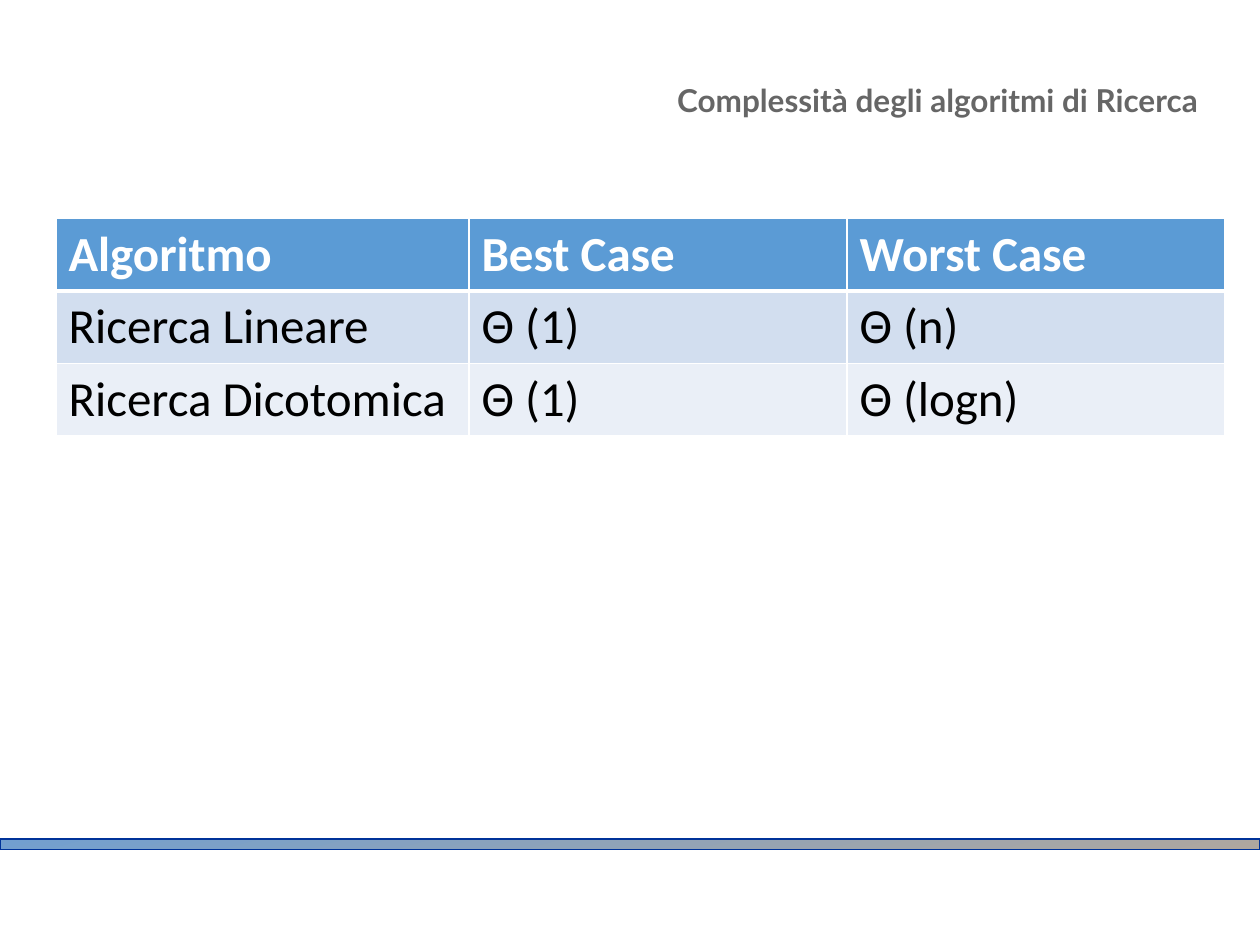
import pptx
import pptx.util
import pptx.dml.color
import pptx.enum.shapes
import pptx.enum.text
import pptx.oxml.ns
import lxml.etree

Pt = pptx.util.Pt
RGB = pptx.dml.color.RGBColor.from_string

THEME = {
    "title": {"name": "Lato", "size": Pt(18), "bold": True},
    "title_color": "666666",
    "head": {"name": "Calibri", "size": Pt(28), "bold": True},
    "body": {"name": "Calibri", "size": Pt(28), "bold": False},
    "head_color": "FFFFFF",
    "body_color": "000000",
    "row_fills": ["5B9BD5", "D2DEEF", "EAEFF7"],
    "border": "FFFFFF",
    "bar_stops": ["729FCF", "AEA79F"],
    "bar_line": "003399",
}


def set_font(font, values, color):
    for name, value in values.items():
        setattr(font, name, value)
    font.color.rgb = RGB(color)


def add_border(cell, side, width):
    qn = pptx.oxml.ns.qn
    tc_pr = cell._tc.get_or_add_tcPr()
    ln = lxml.etree.SubElement(tc_pr, qn("a:" + side), w=str(Pt(width)))
    fill = lxml.etree.SubElement(ln, qn("a:solidFill"))
    lxml.etree.SubElement(fill, qn("a:srgbClr"), val=THEME["border"])


prs = pptx.Presentation()
prs.slide_width, prs.slide_height = Pt(720), Pt(540)
s = prs.slides.add_slide(prs.slide_layouts[5])

bar = s.shapes.add_shape(pptx.enum.shapes.MSO_SHAPE.RECTANGLE, Pt(0), Pt(479.5), Pt(720), Pt(6))
bar.shadow.inherit = False
bar.fill.gradient()
bar.fill.gradient_angle = 285
for stop, color, position in zip(bar.fill.gradient_stops, THEME["bar_stops"], (0, 1)):
    stop.color.rgb = RGB(color)
    stop.position = position
bar.line.color.rgb = RGB(THEME["bar_line"])
bar.line.width = Pt(0.75)

title = s.shapes.title
title.left, title.top, title.width, title.height = Pt(371.5), Pt(16.5), Pt(328.5), Pt(81.5)
tf = title.text_frame
tf.text = "Complessità degli algoritmi di Ricerca"
tf.word_wrap = True
tf.vertical_anchor = pptx.enum.text.MSO_ANCHOR.MIDDLE
p = tf.paragraphs[0]
p.alignment = pptx.enum.text.PP_ALIGN.CENTER
set_font(p.runs[0].font, THEME["title"], THEME["title_color"])

rows = [
    ["Algoritmo", "Best Case", "Worst Case"],
    ["Ricerca Lineare", "Θ (1)", "Θ (n)"],
    ["Ricerca Dicotomica", "Θ (1)", "Θ (logn)"],
]
widths = [236, 216, 216]
row_height = 41
table = s.shapes.add_table(
    len(rows), len(widths), Pt(32), Pt(124.8), Pt(sum(widths)), Pt(row_height * len(rows))
).table
for column, width in zip(table.columns, widths):
    column.width = Pt(width)
for i, texts in enumerate(rows):
    part = "head" if i == 0 else "body"
    for j, text in enumerate(texts):
        cell = table.cell(i, j)
        cell.text = text
        set_font(cell.text_frame.paragraphs[0].runs[0].font, THEME[part], THEME[part + "_color"])
        borders = {"lnL": 1, "lnR": 1, "lnT": 3 if i == 1 else 1, "lnB": 3 if i == 0 else 1}
        for side, width in borders.items():
            add_border(cell, side, width)
        cell.fill.solid()
        cell.fill.fore_color.rgb = RGB(THEME["row_fills"][i])

prs.save("out.pptx")
